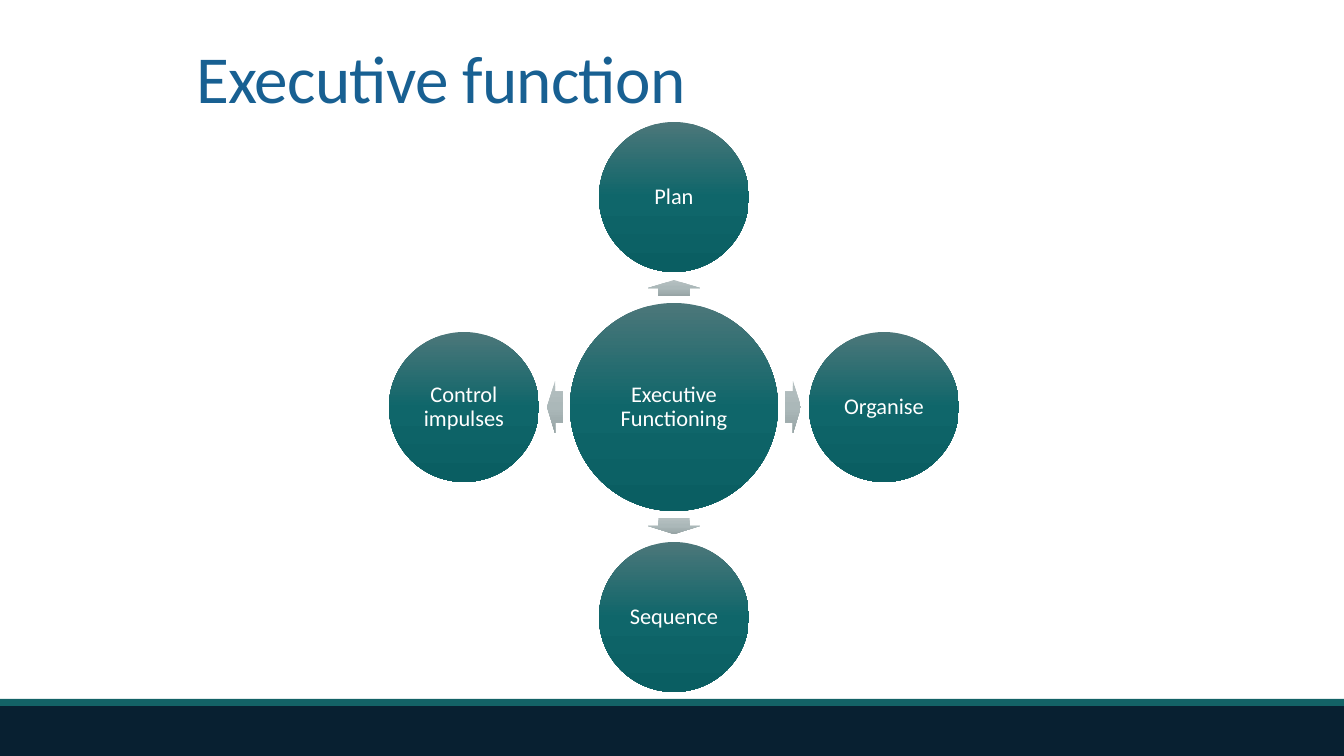
import copy
import math
import pptx
import pptx.util
import pptx.dml.color
import pptx.enum.shapes
import pptx.enum.text
import pptx.oxml.ns

SCALE = 914400 / 100.8
WIDE, HIGH = 1344, 756
HEX = {
    "title": "186092", "text": "FFFFFF", "navy": "082031", "teal": "136266",
    "disc": ["4C777A", "0F666A", "0A5E62"],
    "arrow": ["B5C0C1", "ABB8B9", "97A4A5"],
}
KIND = pptx.enum.shapes.MSO_SHAPE
ALIGN = pptx.enum.text.PP_ALIGN
ANCHOR = pptx.enum.text.MSO_ANCHOR
FIT = pptx.enum.text.MSO_AUTO_SIZE
RGB = pptx.dml.color.RGBColor.from_string


def px(num):
    return pptx.util.Emu(round(num * SCALE))


def apply(item, form):
    for key, value in form.items():
        setattr(item, key, value)


def add_shape(shapes, kind, box):
    shape = shapes.add_shape(kind, *map(px, box))
    shape.shadow.inherit = False
    shape.line.fill.background()
    return shape


def shade(shape, tones):
    shape.fill.gradient()
    shape.fill.gradient_angle = 270
    grad = shape._element.spPr.find(pptx.oxml.ns.qn("a:gradFill"))
    grad.set("rotWithShape", "0")
    stops = grad.find(pptx.oxml.ns.qn("a:gsLst"))
    stops.append(copy.deepcopy(stops[-1]))
    for spot, (stop, tone) in enumerate(zip(shape.fill.gradient_stops, tones)):
        apply(stop, {"position": spot / 2})
        stop.color.rgb = RGB(tone)


def write(frame, text, size, tone, align, gap):
    frame.text = text
    para = frame.paragraphs[0]
    apply(para, {"alignment": align, "line_spacing": gap})
    font = para.runs[0].font
    apply(font, {"name": "Calibri", "size": pptx.util.Pt(size)})
    font.color.rgb = RGB(tone)
    return para.runs[0]


def add_title(slide, box, text):
    title = slide.shapes.title
    apply(title, dict(zip(("left", "top", "width", "height"), map(px, box))))
    apply(title.text_frame, {
        "vertical_anchor": ANCHOR.BOTTOM, "word_wrap": True, "auto_size": FIT.NONE})
    run = write(title.text_frame, text, 48, HEX["title"], ALIGN.LEFT, 0.85)
    run.font._element.set("spc", "-50")


def add_foot(slide, box):
    left, top, width, height = box
    edge = 7
    for name, y, tall in (("navy", top + edge, height - edge), ("teal", top, edge)):
        bar = add_shape(slide.shapes, KIND.RECTANGLE, (left, y, width, tall))
        bar.fill.solid()
        bar.fill.fore_color.rgb = RGB(HEX[name])


def add_disc(shapes, x, y, size, text):
    disc = add_shape(shapes, KIND.OVAL, (x - size / 2, y - size / 2, size, size))
    shade(disc, HEX["disc"])
    frame = disc.text_frame
    sides = ("margin_left", "margin_top", "margin_right", "margin_bottom")
    apply(frame, dict.fromkeys(sides, px(2)))
    apply(frame, {"vertical_anchor": ANCHOR.MIDDLE, "word_wrap": True})
    write(frame, text, 16, HEX["text"], ALIGN.CENTER, 0.9)


def add_arrow(shapes, x, y, turn):
    width, height = 16, 52
    box = (x - width / 2, y - height / 2, width, height)
    arrow = add_shape(shapes, KIND.RIGHT_ARROW, box)
    arrow.adjustments[0] = 0.6
    arrow.rotation = turn
    shade(arrow, HEX["arrow"])


def add_wheel(slide, box, hub, names):
    left, top, width, height = box
    x, y = left + width / 2, top + height / 2
    size, mid = 150, 119
    reach = (height - size) / 2
    shapes = slide.shapes.add_group_shape().shapes
    add_disc(shapes, x, y, 208, hub)
    for spot, name in enumerate(names):
        turn = (270 + spot * 360 / len(names)) % 360
        dx, dy = math.cos(math.radians(turn)), math.sin(math.radians(turn))
        add_arrow(shapes, x + mid * dx, y + mid * dy, turn)
        add_disc(shapes, x + reach * dx, y + reach * dy, size, name)


def main():
    deck = pptx.Presentation()
    apply(deck, {"slide_width": px(WIDE), "slide_height": px(HIGH)})
    slide = deck.slides.add_slide(deck.slide_layouts[5])
    add_foot(slide, (0, 699, WIDE, 57))
    add_title(slide, (186, -38, 832, 160), "Executive function")
    add_wheel(slide, (389, 122, 570, 570), "Executive Functioning",
              ["Plan", "Organise", "Sequence", "Control impulses"])
    deck.save("out.pptx")


if __name__ == "__main__":
    main()
